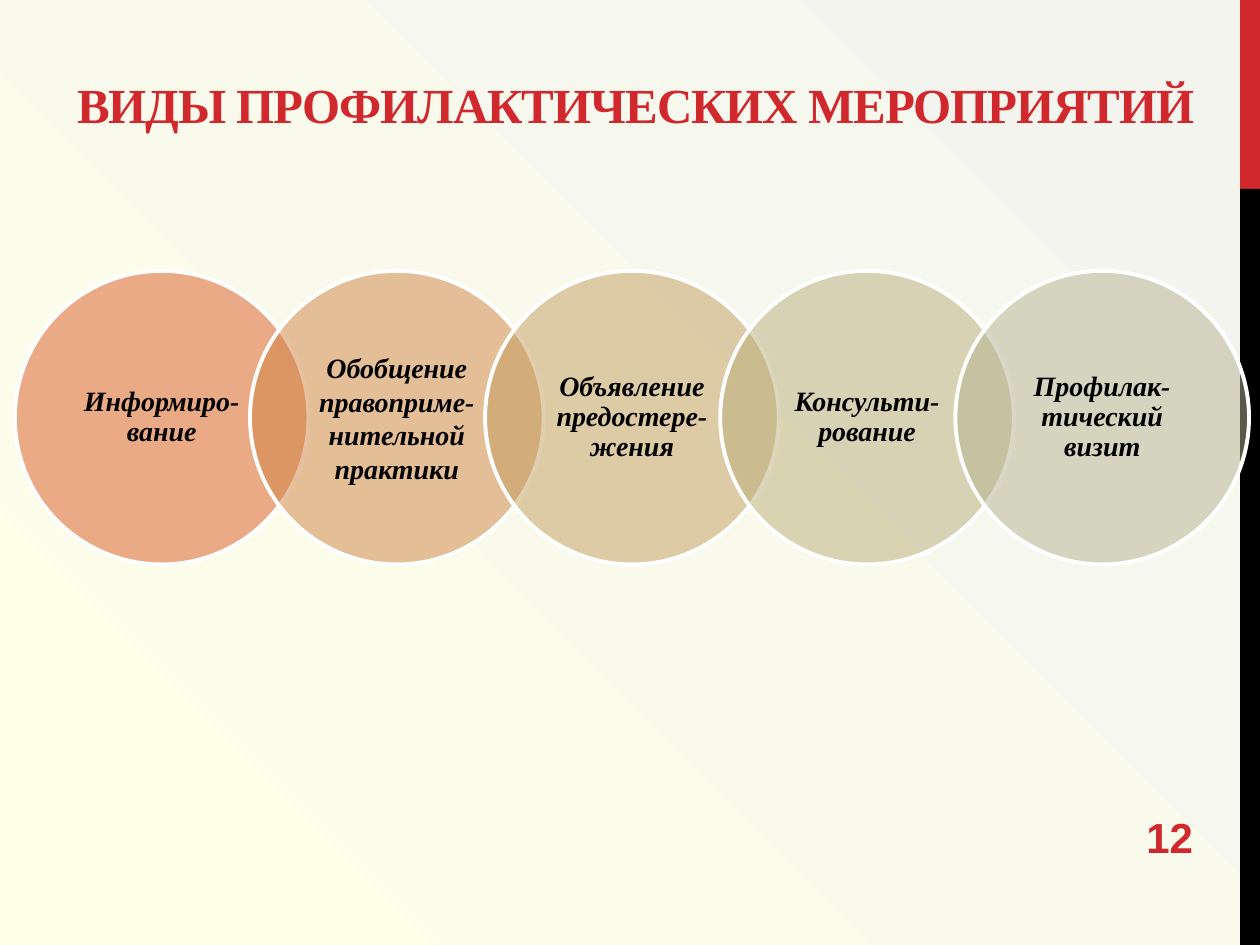
from lxml import etree
from pptx import Presentation
from pptx.dml.color import RGBColor
from pptx.enum.shapes import MSO_SHAPE
from pptx.enum.text import MSO_ANCHOR, MSO_AUTO_SIZE, PP_ALIGN
from pptx.oxml.ns import qn
from pptx.util import Cm, Pt

RECTANGLE, OVAL = MSO_SHAPE.RECTANGLE, MSO_SHAPE.OVAL
LEFT, CENTER = PP_ALIGN.LEFT, PP_ALIGN.CENTER
MIDDLE, BOTTOM = MSO_ANCHOR.MIDDLE, MSO_ANCHOR.BOTTOM
NO_AUTOFIT = MSO_AUTO_SIZE.NONE
TITLE_ONLY = 5

RED = RGBColor(0xD1, 0x28, 0x2E)
BLACK = RGBColor(0x00, 0x00, 0x00)
WHITE = RGBColor(0xFF, 0xFF, 0xFF)
CREAM = RGBColor(0xFD, 0xFF, 0xE7)
PALE_GREY = RGBColor(0xF4, 0xF4, 0xEF)

SERIF, SANS = "Times New Roman", "Arial"

# Circle fill, paragraphs, line spacing
MEASURES = [
    (RGBColor(0xDC, 0x59, 0x24), ["Информиро-вание"], 0.9),
    (RGBColor(0xCE, 0x83, 0x43),
     ["Обобщение", "правоприме-нительной", "практики"], 1.0),
    (RGBColor(0xC3, 0x9E, 0x60), ["Объявление предостере-жения"], 0.9),
    (RGBColor(0xBA, 0xAE, 0x7A), ["Консульти-рование"], 0.9),
    (RGBColor(0xB4, 0xB3, 0x92), ["Профилак-тический визит"], 0.9),
]

# Circle row, in centimetres
ROW_LEFT, ROW_TOP = 0.3, 5.46
DIAMETER, PITCH = 5.92, 4.74
LABEL_OFFSET, LABEL_SIZE = 0.86, 4.2


def write_text(frame, lines, *, size, font=SERIF, color=BLACK, italic=False,
               align=LEFT, anchor=MIDDLE, line_spacing=1.0, tracking=None):
    """Fill a text frame with bold paragraphs in one format."""
    frame.word_wrap = True
    frame.auto_size = NO_AUTOFIT
    frame.vertical_anchor = anchor
    for index, line in enumerate(lines):
        paragraph = frame.add_paragraph() if index else frame.paragraphs[0]
        paragraph.alignment = align
        paragraph.line_spacing = line_spacing
        run = paragraph.add_run()
        run.text = line
        run.font.name = font
        run.font.size = Pt(size)
        run.font.bold = True
        run.font.italic = italic
        run.font.color.rgb = color
        if tracking is not None:
            run.font._element.set("spc", str(round(tracking * 100)))


class SlideBuilder:
    """Holds the current slide and draws its kinds of element."""

    def __init__(self, slide):
        self.slide = slide

    def background(self, inner, outer):
        fill = self.slide.background.fill
        fill.gradient()
        for stop, color, position in zip(fill.gradient_stops, (inner, outer), (0, 0.99)):
            stop.color.rgb = color
            stop.position = position
        # Radial gradient that spreads from the bottom left corner
        gradient = self.slide._element.find(".//" + qn("a:gradFill"))
        gradient.remove(gradient.find(qn("a:lin")))
        radial = etree.SubElement(gradient, qn("a:path"), {"path": "circle"})
        etree.SubElement(radial, qn("a:fillToRect"), {"t": "100000", "r": "100000"})

    def title(self, text, left, top, width, height, **text_format):
        title = self.slide.shapes.title
        title.left, title.top = Cm(left), Cm(top)
        title.width, title.height = Cm(width), Cm(height)
        write_text(title.text_frame, [text], **text_format)

    def shape(self, kind, left, top, width, height, color, opacity=None, outline=None):
        shape = self.slide.shapes.add_shape(kind, Cm(left), Cm(top), Cm(width), Cm(height))
        shape.shadow.inherit = False
        shape.fill.solid()
        shape.fill.fore_color.rgb = color
        if opacity is not None:
            color_element = shape._element.spPr.find(qn("a:solidFill"))[0]
            etree.SubElement(color_element, qn("a:alpha"), {"val": str(opacity * 1000)})
        if outline is None:
            shape.line.fill.background()
        else:
            shape.line.color.rgb = outline
            shape.line.width = Pt(2.25)

    def label(self, lines, left, top, width, height, margins=None, **text_format):
        box = self.slide.shapes.add_textbox(Cm(left), Cm(top), Cm(width), Cm(height))
        frame = box.text_frame
        if margins:
            frame.margin_left = frame.margin_right = Cm(margins[0])
            frame.margin_top = frame.margin_bottom = Cm(margins[1])
        write_text(frame, lines, **text_format)


def main():
    presentation = Presentation()
    presentation.slide_width, presentation.slide_height = Cm(25.4), Cm(19.05)
    slide = presentation.slides.add_slide(presentation.slide_layouts[TITLE_ONLY])
    builder = SlideBuilder(slide)

    # Background and side bars
    builder.background(CREAM, PALE_GREY)
    builder.shape(RECTANGLE, 25, 0, 0.4, 3.81, RED)
    builder.shape(RECTANGLE, 25, 3.81, 0.4, 15.24, BLACK)

    # Title
    builder.title("ВИДЫ ПРОФИЛАКТИЧЕСКИХ МЕРОПРИЯТИЙ", 1.3, 1.12, 23.04, 1.7,
                  size=28, color=RED, anchor=BOTTOM, tracking=-0.6)

    # Row of overlapping circles
    for index, (color, lines, line_spacing) in enumerate(MEASURES):
        left = ROW_LEFT + index * PITCH
        builder.shape(OVAL, left, ROW_TOP, DIAMETER, DIAMETER, color,
                      opacity=50, outline=WHITE)
        builder.label(lines, left + LABEL_OFFSET, ROW_TOP + LABEL_OFFSET,
                      LABEL_SIZE, LABEL_SIZE, margins=(0.33, 0.05), size=16,
                      italic=True, align=CENTER, line_spacing=line_spacing)

    # Page number
    builder.label(["12"], 22.86, 16.36, 3.66, 1.02, size=24, font=SANS, color=RED)

    presentation.save("out.pptx")


if __name__ == "__main__":
    main()
